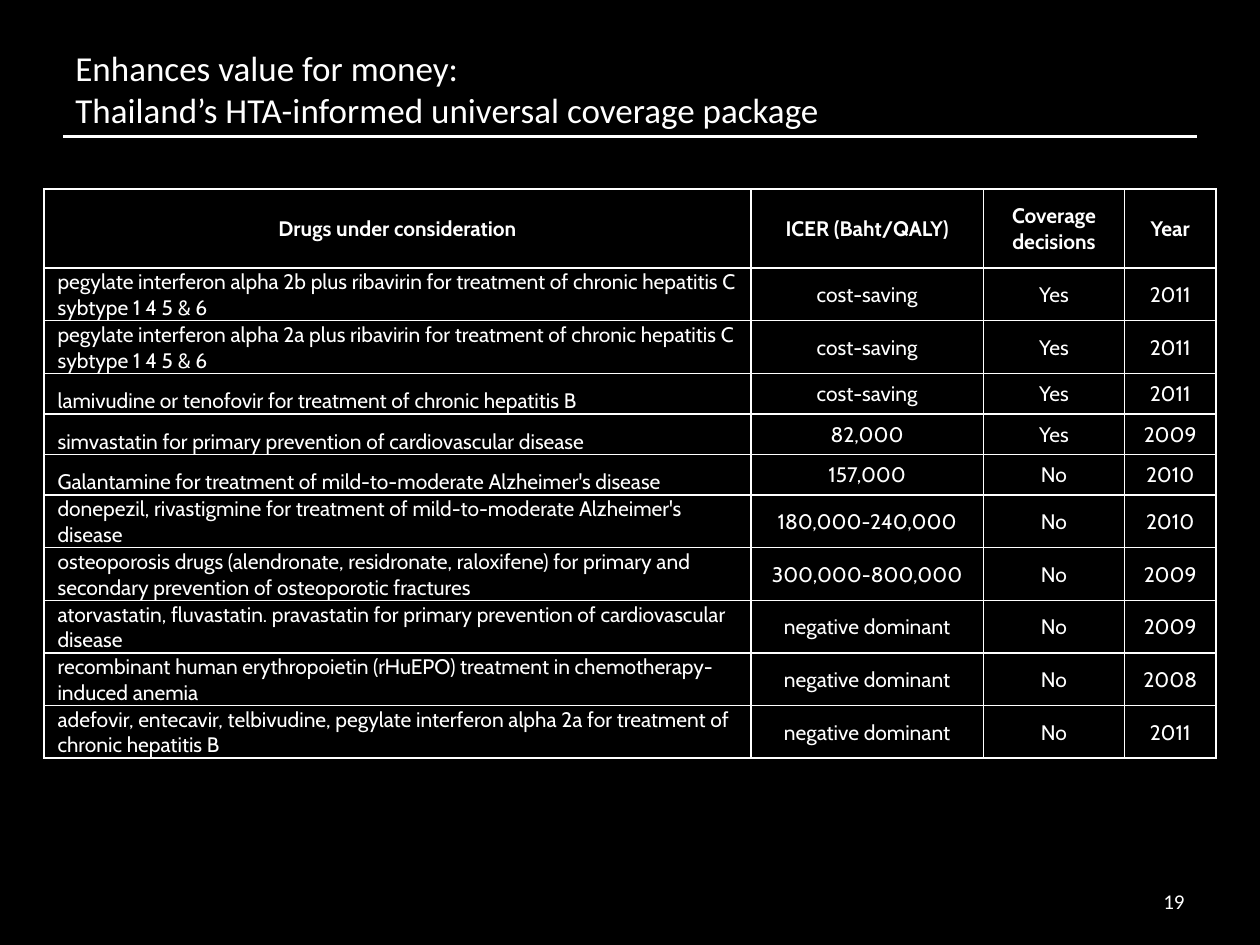
import lxml.etree
import pptx
import pptx.dml.color
import pptx.enum.shapes
import pptx.enum.text
import pptx.oxml
import pptx.oxml.ns
import pptx.util

Pt = pptx.util.Pt
Align = pptx.enum.text.PP_ALIGN
Anchor = pptx.enum.text.MSO_ANCHOR
BLACK = pptx.dml.color.RGBColor(0, 0, 0)
WHITE = pptx.dml.color.RGBColor(255, 255, 255)

HEADER = ("Drugs under consideration", "ICER (Baht/QALY)", "Coverage decisions", "Year")
DRUGS = [
    ("pegylate interferon alpha 2b plus ribavirin for treatment of chronic hepatitis C sybtype 1 4 5 & 6",
     "cost-saving", "Yes", "2011"),
    ("pegylate interferon alpha 2a plus ribavirin for treatment of chronic hepatitis C sybtype 1 4 5 & 6",
     "cost-saving", "Yes", "2011"),
    ("lamivudine or tenofovir for treatment of chronic hepatitis B", "cost-saving", "Yes", "2011"),
    ("simvastatin for primary prevention of cardiovascular disease", "82,000", "Yes", "2009"),
    ("Galantamine for treatment of mild-to-moderate Alzheimer's disease", "157,000", "No", "2010"),
    ("donepezil, rivastigmine for treatment of mild-to-moderate Alzheimer's disease",
     "180,000-240,000", "No", "2010"),
    ("osteoporosis drugs (alendronate, residronate, raloxifene) for primary and secondary prevention "
     "of osteoporotic fractures", "300,000-800,000", "No", "2009"),
    ("atorvastatin, fluvastatin. pravastatin for primary prevention of cardiovascular disease",
     "negative dominant", "No", "2009"),
    ("recombinant human erythropoietin (rHuEPO) treatment in chemotherapy-induced anemia",
     "negative dominant", "No", "2008"),
    ("adefovir, entecavir, telbivudine, pegylate interferon alpha 2a for treatment of chronic hepatitis B",
     "negative dominant", "No", "2011"),
]
COLUMN_WIDTHS = (404, 132.7, 80.8, 52.1)
HEADER_HEIGHT, TALL, SHORT = 45.2, 30.1, 23.2
ROW_HEIGHTS = [HEADER_HEIGHT] + [TALL] * 2 + [SHORT] * 3 + [TALL] * 5


def style_text(para, font_name, size, bold=False):
    for span in para.runs:
        span.font.name = font_name
        span.font.size = Pt(size)
        span.font.bold = bold
        span.font.color.rgb = WHITE


def add_text(page, text, left, top, width, height, size, anchor, align):
    box = page.shapes.add_textbox(Pt(left), Pt(top), Pt(width), Pt(height))
    box.text_frame.word_wrap = True
    box.text_frame.vertical_anchor = anchor
    para = box.text_frame.paragraphs[0]
    para.text = text
    para.alignment = align
    style_text(para, "Calibri", size)


deck = pptx.Presentation()
deck.slide_width, deck.slide_height = Pt(720), Pt(540)
page = deck.slides.add_slide(deck.slide_layouts[6])
page.background.fill.solid()
page.background.fill.fore_color.rgb = BLACK

rule = page.shapes.add_connector(pptx.enum.shapes.MSO_CONNECTOR.STRAIGHT, Pt(36), Pt(78), Pt(684), Pt(78))
rule.line.color.rgb = WHITE
rule.line.width = Pt(2.25)
lxml.etree.SubElement(rule._element.spPr, pptx.oxml.ns.qn("a:effectLst"))

add_text(page, "Enhances value for money:\nThailand’s HTA-informed universal coverage package",
         36, 27.5, 648, 50.4, 20, Anchor.BOTTOM, Align.LEFT)
add_text(page, "19", 643, 500.5, 41, 28.8, 12, Anchor.MIDDLE, Align.RIGHT)

rows = [HEADER] + DRUGS
frame = page.shapes.add_table(len(rows), len(HEADER), Pt(25.2), Pt(108),
                              Pt(sum(COLUMN_WIDTHS)), Pt(sum(ROW_HEIGHTS)))
table = frame.table
for column, width in zip(table.columns, COLUMN_WIDTHS):
    column.width = Pt(width)
for row, height in zip(table.rows, ROW_HEIGHTS):
    row.height = Pt(height)

for row_index, values in enumerate(rows):
    for column_index, value in enumerate(values):
        cell = table.cell(row_index, column_index)
        is_header = row_index == 0
        is_drug = column_index == 0 and not is_header
        cell.margin_left = cell.margin_right = cell.margin_top = Pt(0.72)
        cell.margin_bottom = Pt(0)
        cell.vertical_anchor = Anchor.BOTTOM if is_drug else Anchor.MIDDLE
        cell.fill.solid()
        cell.fill.fore_color.rgb = BLACK
        para = cell.text_frame.paragraphs[0]
        para.text = value
        para.alignment = Align.LEFT if is_drug else Align.CENTER
        if is_drug:
            para._p.get_or_add_pPr().set("marL", str(Pt(7)))
        style_text(para, "Cabin", 12, is_header)
        for position, side in enumerate("LRTB"):
            border = pptx.oxml.parse_xml(
                f'<a:ln{side} {pptx.oxml.ns.nsdecls("a")} w="{Pt(1)}">'
                f'<a:solidFill><a:srgbClr val="{WHITE}"/></a:solidFill></a:ln{side}>')
            cell._tc.get_or_add_tcPr().insert(position, border)

deck.save("out.pptx")
